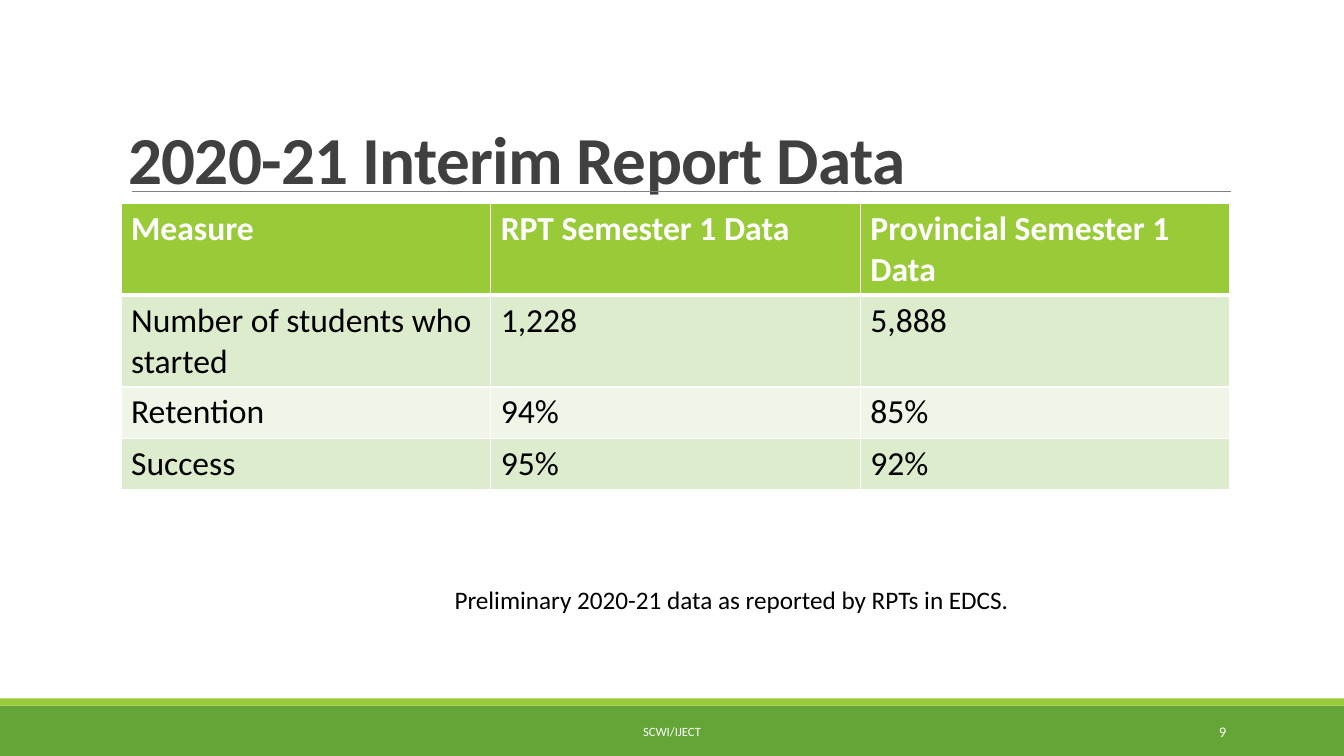
import pptx
import pptx.util
import pptx.dml.color
import pptx.enum.shapes
import pptx.enum.text
import pptx.oxml.ns
import lxml.etree

WIDE, HIGH = 13.33, 7.5
FONT = "Calibri"
HUES = {
    "green": "63A537", "lime": "99CB38", "rule": "808080", "title": "404040",
    "white": "FFFFFF", "black": "000000", "band": "DEECCE", "pale": "EFF6E8",
}
ROWS = [
    ("Measure", "RPT Semester 1 Data", "Provincial Semester 1 Data"),
    ("Number of students who started", "1,228", "5,888"),
    ("Retention", "94%", "85%"),
    ("Success", "95%", "92%"),
]
ALIGN = pptx.enum.text.PP_ALIGN
ANCHOR = pptx.enum.text.MSO_ANCHOR


def tint(name):
    """Return the named colour."""
    return pptx.dml.color.RGBColor.from_string(HUES[name])


def span(*sizes):
    """Turn inches into lengths."""
    return [pptx.util.Inches(size) for size in sizes]


def tag(parent, name, **attrs):
    """Add a drawing element with its attributes."""
    return lxml.etree.SubElement(parent, pptx.oxml.ns.qn(name), **attrs)


def write(frame, text, size, hue, bold=False, align=ALIGN.LEFT):
    """Put one styled run into a text frame."""
    para = frame.paragraphs[0]
    para.alignment = align
    run = para.add_run()
    run.text = text
    font = run.font
    font.name, font.size, font.bold = FONT, pptx.util.Pt(size), bold
    font.color.rgb = tint(hue)
    return para, run


def label(slide, box, text, size, hue, align=ALIGN.LEFT, anchor=ANCHOR.TOP):
    """Add a wrapped text box."""
    frame = slide.shapes.add_textbox(*span(*box)).text_frame
    frame.word_wrap = True
    frame.vertical_anchor = anchor
    write(frame, text, size, hue, align=align)


def bar(slide, box, hue):
    """Add a plain filled bar."""
    shape = slide.shapes.add_shape(
        pptx.enum.shapes.MSO_SHAPE.RECTANGLE, *span(*box))
    shape.shadow.inherit = False
    shape.fill.solid()
    shape.fill.fore_color.rgb = tint(hue)
    shape.line.fill.background()


def head(slide, box):
    """Fill the title and draw the rule beneath it."""
    left, top, wide, high = box
    title = slide.shapes.title
    title.left, title.top, title.width, title.height = span(*box)
    frame = title.text_frame
    frame.word_wrap = True
    frame.auto_size = pptx.enum.text.MSO_AUTO_SIZE.NONE
    frame.vertical_anchor = ANCHOR.BOTTOM
    para, run = write(frame, "2020-21 Interim Report Data", 48, "title", True)
    para.line_spacing = 0.85
    para.space_before = pptx.util.Pt(0)
    run.font._element.set("spc", "-50")
    level = top + high - 0.12
    rule = slide.shapes.add_connector(
        pptx.enum.shapes.MSO_CONNECTOR.STRAIGHT,
        *span(left + 0.14, level, left + wide + 0.04, level))
    rule.line.color.rgb = tint("rule")
    rule.line.width = pptx.util.Pt(0.5)
    tag(rule._element.spPr, "a:effectLst")


def edge(cell, first):
    """Draw white cell borders, thicker where header meets body."""
    props = cell._tc.get_or_add_tcPr()
    for side in "LRTB":
        thick = 3 if first and side == "B" else 1
        line = tag(props, "a:ln" + side, w=str(pptx.util.Pt(thick)))
        tag(tag(line, "a:solidFill"), "a:srgbClr", val=HUES["white"])


def grid(slide, box):
    """Build the data table with equal columns."""
    table = slide.shapes.add_table(len(ROWS), len(ROWS[0]), *span(*box)).table
    for row, high in zip(table.rows, (0.91, 0.91, 0.51, 0.51)):
        row.height = pptx.util.Inches(high)
    for i, texts in enumerate(ROWS):
        fill = "lime" if i == 0 else ("band" if i % 2 else "pale")
        hue = "white" if i == 0 else "black"
        for j, text in enumerate(texts):
            cell = table.cell(i, j)
            edge(cell, i == 0)
            cell.fill.solid()
            cell.fill.fore_color.rgb = tint(fill)
            write(cell.text_frame, text, 24, hue, i == 0)


def foot(slide, box):
    """Draw the footer band with its name and page number."""
    left, top, wide, high = box
    bar(slide, (left, top, wide, high), "green")
    bar(slide, (left, top - 0.07, wide, 0.07), "lime")
    label(slide, (left + 4.03, top + 0.06, 5.27, 0.4), "SCWI/IJECT", 9,
          "white", ALIGN.CENTER, ANCHOR.MIDDLE)
    label(slide, (left + 10.83, top + 0.06, 1.43, 0.4), "9", 10.5,
          "white", ALIGN.RIGHT, ANCHOR.MIDDLE)


def main():
    """Build and save the slide."""
    deck = pptx.Presentation()
    deck.slide_width, deck.slide_height = span(WIDE, HIGH)
    slide = deck.slides.add_slide(deck.slide_layouts[5])
    foot(slide, (0, HIGH - 0.5, WIDE, 0.5))
    head(slide, (1.17, 0.43, 11, 1.59))
    grid(slide, (1.2, 2.02, 11, 2.84))
    label(slide, (4.41, 5.75, 7.66, 0.4),
          "Preliminary 2020-21 data as reported by RPTs in EDCS.", 18, "black")
    deck.save("out.pptx")


if __name__ == "__main__":
    main()
